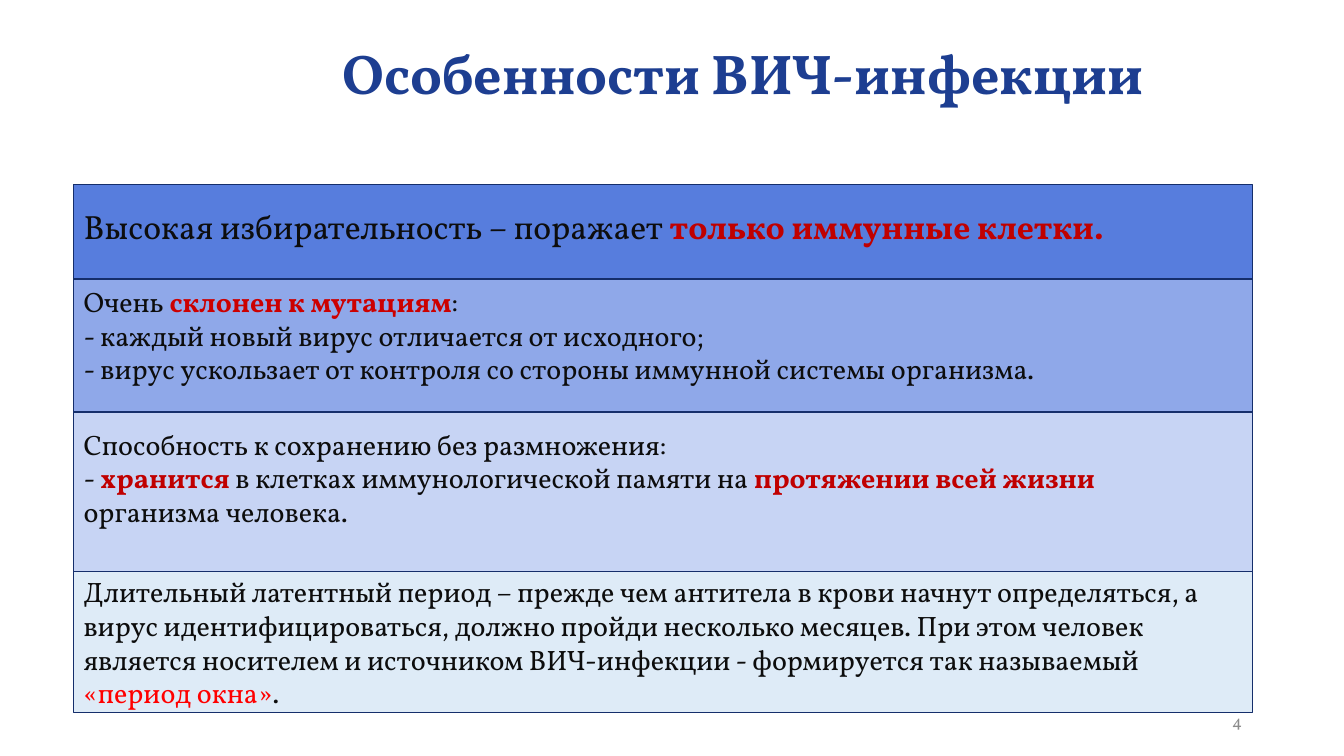
from dataclasses import dataclass

from lxml import etree
from pptx import Presentation
from pptx.dml.color import RGBColor
from pptx.enum.shapes import MSO_SHAPE
from pptx.enum.text import MSO_ANCHOR, MSO_AUTO_SIZE, PP_ALIGN
from pptx.oxml.ns import qn
from pptx.util import Inches, Pt

RECT = MSO_SHAPE.RECTANGLE
TOP, MIDDLE = MSO_ANCHOR.TOP, MSO_ANCHOR.MIDDLE
LEFT, CENTER, RIGHT = PP_ALIGN.LEFT, PP_ALIGN.CENTER, PP_ALIGN.RIGHT
NO_FIT = MSO_AUTO_SIZE.NONE

# Slide size and a grid of 100 columns by 100 rows
WIDTH, HEIGHT = Inches(13.33), Inches(7.5)
COL, ROW = WIDTH / 100, HEIGHT / 100
MARGIN, BAND_WIDTH = 5.48, 87.7


@dataclass(frozen=True)
class Theme:
    font: str = "Vollkorn"
    title: str = "1D3E91"
    ink: str = "0D0D0D"
    muted: str = "8C8C8C"
    line: str = "152E6B"
    bands: tuple = ("577DDD", "8FA8E9", "C7D4F4", "DEEBF7")
    title_size: int = 40
    lead_size: int = 24
    text_size: int = 20
    number_size: int = 12


THEME = Theme()

# Run styles: colour and weight
PLAIN = {"color": THEME.ink, "bold": False}
STRONG = {"color": "C00000", "bold": True}
BRIGHT = {"color": "CC0000", "bold": True}
WINDOW = {"color": "FF0000", "bold": False}
HEADING = {"color": THEME.title, "bold": True}
NUMBER = {"color": THEME.muted, "bold": False}

SELECTIVITY = [("Высокая избирательность – поражает ", PLAIN),
               ("только иммунные клетки.", STRONG)]
MUTATION = [("Очень ", PLAIN), ("склонен к мутациям", BRIGHT),
            (":\n- каждый новый вирус отличается от исходного;\n"
             "- вирус ускользает от контроля со стороны иммунной системы "
             "организма.", PLAIN)]
STORAGE = [("Способность к сохранению без размножения:\n- ", PLAIN),
           ("хранится", STRONG),
           (" в клетках иммунологической памяти на ", PLAIN),
           ("протяжении всей жизни", STRONG),
           (" организма человека.", PLAIN)]
LATENCY = [("Длительный латентный период – прежде чем антитела в крови начнут "
            "определяться, а вирус идентифицироваться, должно пройди несколько "
            "месяцев. При этом человек является носителем и источником "
            "ВИЧ-инфекции - формируется так называемый ", PLAIN),
           ("«период окна»", WINDOW), (".", PLAIN)]


def grid(x, y, w, h):
    return [round(v) for v in (x * COL, y * ROW, w * COL, h * ROW)]


def set_all(target, values):
    for name, value in values.items():
        setattr(target, name, value)


def write(sp, runs, size, anchor=MIDDLE, **layout):
    """Fill a shape with one paragraph of styled runs."""
    tf = sp.text_frame
    set_all(tf, {"word_wrap": True, "auto_size": NO_FIT,
                 "vertical_anchor": anchor})
    p = tf.paragraphs[0]
    set_all(p, {"alignment": LEFT, "space_before": Pt(0), **layout})
    for text, style in runs:
        for i, part in enumerate(text.split("\n")):
            if i:
                p.add_line_break()
            r = p.add_run()
            r.text = part
            set_all(r.font, {"name": THEME.font, "size": Pt(size),
                             "bold": style["bold"]})
            r.font.color.rgb = RGBColor.from_string(style["color"])


def add_band(s, y, h, fill, runs=()):
    sp = s.shapes.add_shape(RECT, *grid(MARGIN, y, BAND_WIDTH, h))
    sp.shadow.inherit = False
    sp.fill.solid()
    sp.fill.fore_color.rgb = RGBColor.from_string(fill)
    sp.line.color.rgb = RGBColor.from_string(THEME.line)
    sp.line.width = Pt(1)
    if runs:
        write(sp, runs, THEME.text_size)
    return sp


def add_text(s, cell, runs, size, **layout):
    write(s.shapes.add_textbox(*grid(*cell)), runs, size, **layout)


def fill_placeholder(sp, cell, runs, size, **layout):
    names = ("left", "top", "width", "height")
    set_all(sp, dict(zip(names, grid(*cell))))
    pPr = sp.text_frame.paragraphs[0]._p.get_or_add_pPr()
    pPr.set("marL", "0")
    pPr.set("indent", "0")
    etree.SubElement(pPr, qn("a:buNone"))
    write(sp, runs, size, line_spacing=0.9, **layout)


def main():
    prs = Presentation()
    set_all(prs, {"slide_width": WIDTH, "slide_height": HEIGHT})
    s = prs.slides.add_slide(prs.slide_layouts[1])
    title, body = s.placeholders

    # Title
    fill_placeholder(title, (18.3, 3.87, 74.79, 12.53),
                     [("Особенности ВИЧ-инфекции ", HEADING)],
                     THEME.title_size, alignment=CENTER)

    # Bands, each upper one overlapping the one below
    top, second, third, bottom = THEME.bands
    add_band(s, 53.6, 22, third)
    add_band(s, 34.13, 20.4, second, MUTATION)
    lead = add_band(s, 24.4, 12.53, top)
    add_band(s, 75.6, 18.67, bottom, LATENCY)

    # Lead statement, placed in front of its band
    fill_placeholder(body, (MARGIN, 27.2, 84.85, 7.07), SELECTIVITY,
                     THEME.lead_size, anchor=TOP)
    lead.element.addnext(body.element)

    # Text of the third band and the slide number
    add_text(s, (MARGIN, 55.87, 86.27, 14.8), STORAGE, THEME.text_size,
             anchor=TOP)
    add_text(s, (70.67, 92.67, 22.5, 5.33), [("4", NUMBER)],
             THEME.number_size, alignment=RIGHT)

    prs.save("out.pptx")


if __name__ == "__main__":
    main()
